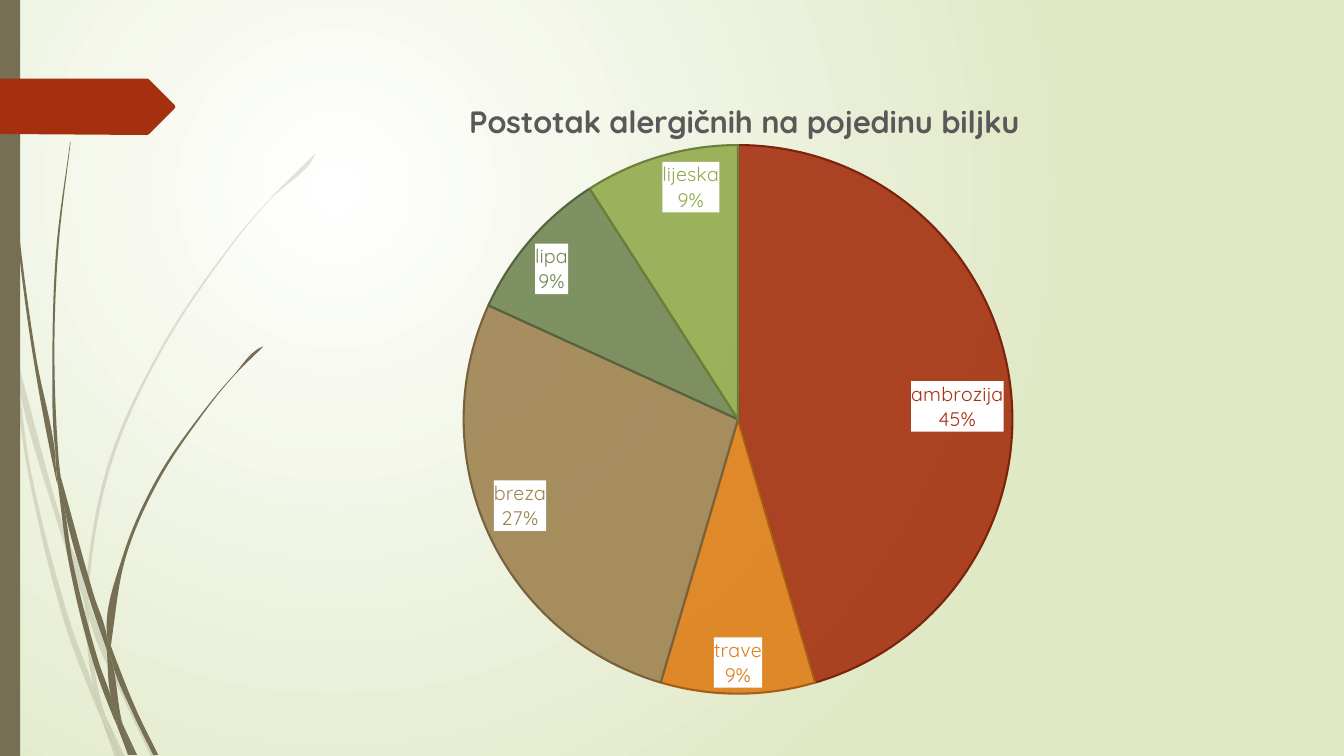
import math

import lxml.etree
import pptx
import pptx.chart.data
import pptx.dml.color
import pptx.enum.chart
import pptx.enum.shapes
import pptx.oxml.ns
import pptx.util

RGB = pptx.dml.color.RGBColor
WHITE = RGB(0xFF, 0xFF, 0xFF)
PALE_GREEN = RGB(0xDF, 0xE8, 0xC4)
STEM = RGB(0x76, 0x6F, 0x54)
RUST = RGB(0xA5, 0x30, 0x10)
GREY = RGB(0x59, 0x59, 0x59)
BLACK = RGB(0, 0, 0)
FONT = "Quicksand"

# The slide is a grid of 1333 columns by 750 rows
WIDTH, HEIGHT = pptx.util.Inches(13.33), pptx.util.Inches(7.5)
COLUMN, ROW = WIDTH / 1333, HEIGHT / 750
SHORT = 15 * COLUMN  # sides below this length stay straight

# Plant, share, slice colour, edge colour
PLANTS = [
    ("ambrozija", 45, RUST, RGB(0x7B, 0x24, 0x0C)),
    ("trave", 9, RGB(0xDE, 0x7E, 0x18), RGB(0xA6, 0x5E, 0x12)),
    ("breza", 27, RGB(0x9F, 0x83, 0x51), RGB(0x77, 0x62, 0x3D)),
    ("lipa", 9, RGB(0x72, 0x86, 0x53), RGB(0x55, 0x64, 0x3E)),
    ("lijeska", 9, RGB(0x92, 0xAA, 0x4C), RGB(0x6D, 0x7F, 0x39)),
]

# Grass blades: corner points as column, row
PALE_GRASS = [
    [(11, 350), (9, 322), (0, 282), (0, 299), (10, 344)],
    [(58, 522), (84, 599), (85, 586), (62, 520), (14, 345), (17, 376)],
    [(92, 607), (88, 596), (88, 610), (123, 694), (150, 751), (155, 751), (127, 692)],
    [(119, 751), (124, 751), (105, 711)],
    [(93, 683), (70, 619), (31, 469), (17, 376), (11, 350), (28, 470), (65, 621),
     (92, 693), (101, 714), (99, 707)],
    [(84, 599), (87, 646), (93, 683), (96, 692), (105, 711), (103, 706), (91, 646),
     (88, 610), (88, 608)],
    [(88, 584), (110, 462), (160, 349), (229, 245), (268, 198), (312, 154),
     (312, 153), (268, 197), (228, 244), (158, 348), (107, 461), (85, 584),
     (85, 586), (88, 596)],
    [(101, 714), (114, 751), (119, 751)],
    [(88, 608), (88, 610), (88, 596), (85, 586), (84, 599)],
    [(96, 692), (93, 683), (99, 707), (101, 714), (119, 751), (105, 711)],
]
DARK_GRASS = [
    [(7, 110), (17, 233), (33, 355), (56, 477), (57, 481), (55, 457), (55, 453),
     (36, 355), (19, 232), (8, 109), (4, 0), (3, 0)],
    [(88, 592), (106, 645), (106, 633), (106, 631), (93, 590), (60, 472), (64, 505)],
    [(113, 649), (110, 641), (111, 656), (132, 708), (152, 749), (157, 749), (136, 706)],
    [(110, 691), (98, 657), (72, 556), (64, 505), (57, 477), (68, 557), (93, 659),
     (111, 708), (117, 722), (116, 717)],
    [(60, 472), (58, 453), (54, 349), (58, 245), (70, 141), (69.5, 141),
     (56, 245), (52, 349), (55, 449)],
    [(133, 749), (136, 749), (122, 719)],
    [(57, 477), (64, 505), (60, 472), (55, 449), (55, 453)],
    [(111, 633), (125, 552), (158, 476), (205, 406), (231, 374), (261, 344),
     (260, 344), (231, 373), (204, 405), (156, 474), (122, 551), (106, 631),
     (110, 641)],
    [(117, 722), (127, 749), (131, 749)],
    [(106, 645), (110, 691), (116, 706), (122, 719), (121, 716), (111, 656), (109, 651)],
    [(106, 645), (109, 651), (111, 656), (110, 641), (106, 631), (106, 633)],
    [(116, 706), (110, 691), (116, 717), (117, 722), (130, 749), (133, 749), (122, 719)],
]
TAG = [(0, 78), (146, 78), (148, 79), (173, 104), (174, 106), (173, 108), (148, 133),
       (146, 134), (0, 133)]


def qn(name):
    return pptx.oxml.ns.qn(name)


def add_child(parent, name, **attributes):
    return lxml.etree.SubElement(parent, qn(name), attributes)


def make_translucent(element, percent):
    colour = next(element.iter(qn("a:srgbClr")))
    add_child(colour, "a:alpha", val=str(percent * 1000))


def unit(start, end):
    length = math.dist(start, end)
    return (end[0] - start[0]) / length, (end[1] - start[1]) / length


def tangents(before, point, after):
    """Directions into and out of a point; gentle turns share one."""
    into, out = unit(before, point), unit(point, after)
    if into[0] * out[0] + into[1] * out[1] < 0.5:
        return into, out
    shared = unit((0, 0), (into[0] + out[0], into[1] + out[1]))
    return shared, shared


def bend_sides(outline, spots):
    """Turn the long sides of an outline into curves that meet smoothly."""
    count = len(spots)
    turns = [tangents(spots[i - 1], spots[i], spots[(i + 1) % count])
             for i in range(count)]
    for i, side in enumerate(list(outline._element.iter(qn("a:lnTo")))):
        start, end = spots[i], spots[(i + 1) % count]
        if math.dist(start, end) < SHORT:
            continue
        reach = math.dist(start, end) / 3
        leave, arrive = turns[i][1], turns[(i + 1) % count][0]
        handles = [(start[0] + reach * leave[0], start[1] + reach * leave[1]),
                   (end[0] - reach * arrive[0], end[1] - reach * arrive[1])]
        curve = lxml.etree.Element(qn("a:cubicBezTo"))
        for x, y in handles:
            add_child(curve, "a:pt", x=str(round(x - outline.left)),
                      y=str(round(y - outline.top)))
        curve.append(side[0])
        side.getparent().replace(side, curve)


def paint(shape, colour):
    shape.shadow.inherit = False
    shape.fill.solid()
    shape.fill.fore_color.rgb = colour
    shape.line.fill.background()


def add_outline(shapes, points, colour, curved=False):
    spots = [(x * COLUMN, y * ROW) for x, y in points]
    builder = shapes.build_freeform(*spots[0])
    builder.add_line_segments(spots[1:] + spots[:1])
    outline = builder.convert_to_shape()
    paint(outline, colour)
    if curved:
        bend_sides(outline, spots)
    return outline


def add_grass(page, blades, opacity=100):
    group = page.shapes.add_group_shape()
    for points in blades:
        blade = add_outline(group.shapes, points, STEM, curved=True)
        if opacity < 100:
            make_translucent(blade._element, opacity)


def set_background(page):
    fill = page.background.fill
    fill.gradient()
    for stop, colour, position in zip(fill.gradient_stops, (WHITE, PALE_GREEN), (0, 1)):
        stop.color.rgb, stop.position = colour, position
    gradient = next(page._element.iter(qn("a:gradFill")))
    gradient.remove(gradient.find(qn("a:lin")))
    circle = add_child(gradient, "a:path", path="circle")
    add_child(circle, "a:fillToRect", l="50000", t="50000", r="100000", b="100000")


def format_font(font, size, colour, bold=False):
    font.name, font.size, font.bold = FONT, pptx.util.Pt(size), bold
    font.color.rgb = colour


def set_layout(parent, index, **shares):
    """Fix a chart part at shares of the chart's size."""
    for old in parent.findall(qn("c:layout")):
        parent.remove(old)
    layout = lxml.etree.Element(qn("c:layout"))
    parent.insert(index, layout)
    manual = add_child(layout, "c:manualLayout")
    if "w" in shares:
        add_child(manual, "c:layoutTarget", val="inner")
    for name in ("xMode", "yMode"):
        add_child(manual, "c:" + name, val="edge")
    for name, share in shares.items():
        add_child(manual, "c:" + name, val=str(share))


def format_label(label):
    """White box showing category above percentage."""
    for name, shown in (("showVal", "0"), ("showCatName", "1"), ("showPercent", "1")):
        label.find(qn("c:" + name)).set("val", shown)
    add_child(label, "c:separator").text = "\n"
    box = lxml.etree.Element(qn("c:spPr"))
    add_child(add_child(box, "a:solidFill"), "a:srgbClr", val=str(WHITE))
    label.find(qn("c:txPr")).addprevious(box)


def add_pie(page):
    data = pptx.chart.data.CategoryChartData()
    data.categories = [plant[0] for plant in PLANTS]
    data.add_series("Series 1", [plant[1] for plant in PLANTS])
    chart = page.shapes.add_chart(
        pptx.enum.chart.XL_CHART_TYPE.PIE, round(165 * COLUMN), round(68 * ROW),
        round(1134 * COLUMN), round(633 * ROW), data).chart
    format_font(chart.font, 10, BLACK)
    chart.has_legend = False
    chart.plots[0].vary_by_categories = True
    # Title
    chart.has_title = True
    frame = chart.chart_title.text_frame
    frame.text = "Postotak alergičnih na pojedinu biljku"
    format_font(frame.paragraphs[0].runs[0].font, 22, GREY, bold=True)
    set_layout(chart.chart_title._element, 1, x=0.26, y=0.04)
    set_layout(next(chart._chartSpace.iter(qn("c:plotArea"))), 0,
               x=0.26, y=0.12, w=0.48, h=0.86)
    # Slices and their labels
    series = chart.plots[0].series[0]
    inside = pptx.enum.chart.XL_LABEL_POSITION.INSIDE_END
    for index, (_, _, colour, edge) in enumerate(PLANTS):
        point = series.points[index]
        point.format.fill.solid()
        point.format.fill.fore_color.rgb = colour
        point.format.line.color.rgb = edge
        point.format.line.width = pptx.util.Pt(1.5)
        format_font(point.data_label.font, 14, colour)
        point.data_label.position = inside
    for part in series._element.iter(qn("c:dPt")):
        make_translucent(part, 90)
    for label in series._element.iter(qn("c:dLbl")):
        format_label(label)
    labels = series.data_labels
    labels.show_value, labels.show_category_name, labels.show_percentage = False, True, True
    labels.position = inside


def main():
    deck = pptx.Presentation()
    deck.slide_width, deck.slide_height = WIDTH, HEIGHT
    page = deck.slides.add_slide(deck.slide_layouts[6])
    set_background(page)
    # Grass, side bar and tag
    add_grass(page, PALE_GRASS, opacity=20)
    add_grass(page, DARK_GRASS)
    bar = page.shapes.add_shape(pptx.enum.shapes.MSO_SHAPE.RECTANGLE,
                                0, 0, round(20 * COLUMN), HEIGHT)
    paint(bar, STEM)
    add_outline(page.shapes, TAG, RUST)
    add_pie(page)
    deck.save("out.pptx")


if __name__ == "__main__":
    main()
